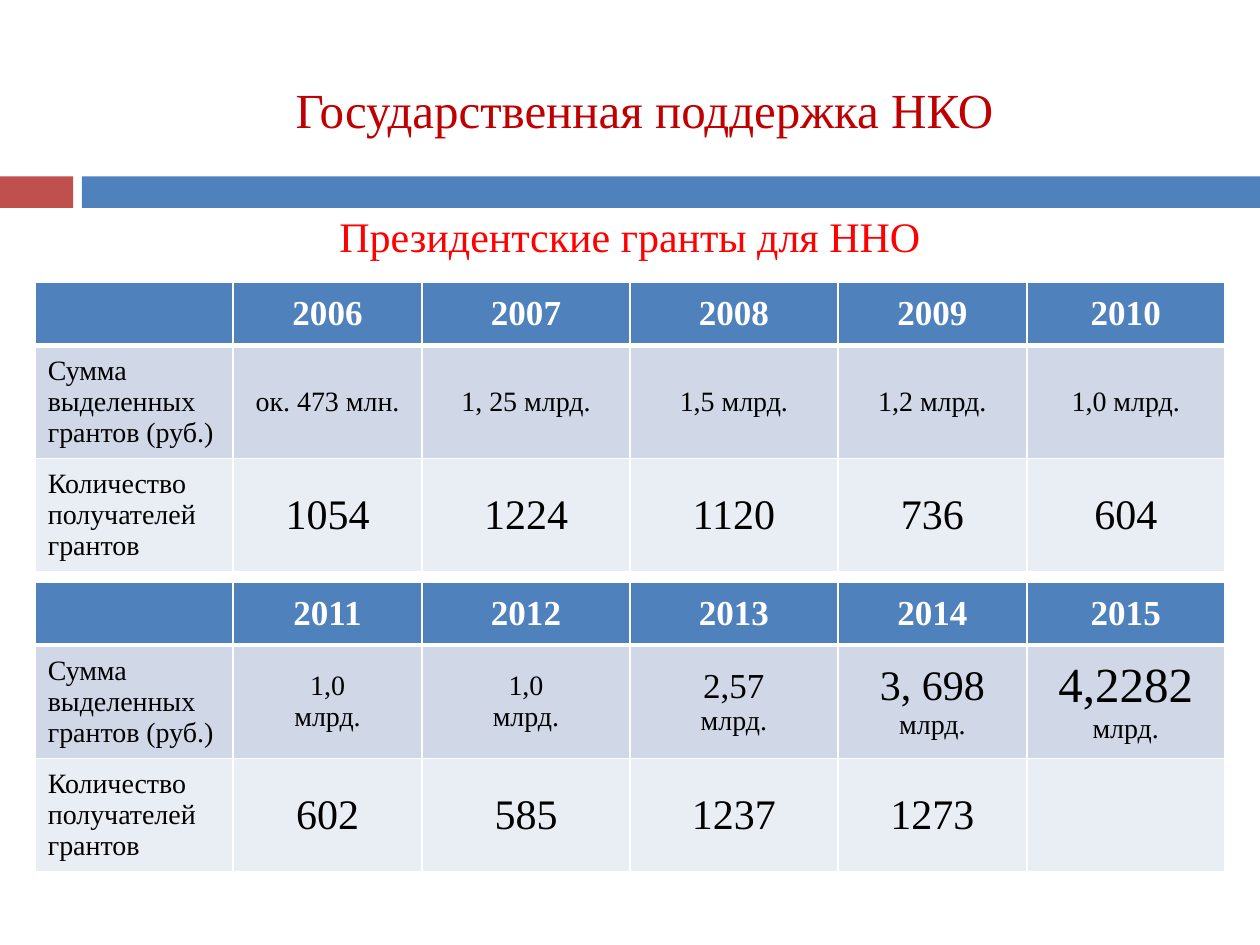
from dataclasses import dataclass

from lxml.etree import SubElement
from pptx import Presentation
from pptx.dml.color import RGBColor
from pptx.enum.shapes import MSO_SHAPE
from pptx.enum.text import MSO_ANCHOR, PP_ALIGN
from pptx.oxml.ns import qn
from pptx.util import Inches, Pt


@dataclass(frozen=True)
class Theme:
    font: str = "Times New Roman"
    title: str = "C00000"
    subtitle: str = "FF0000"
    accent: str = "C0504D"
    header: str = "4F81BD"
    amounts: str = "D0D8E8"
    recipients: str = "E9EDF4"
    light: str = "FFFFFF"
    dark: str = "000000"
    title_size: int = 28
    large_size: int = 24
    header_size: int = 20
    body_size: int = 16


@dataclass(frozen=True)
class Span:
    text: str
    size: int
    color: str = "000000"
    bold: bool = False


@dataclass(frozen=True)
class Bar:
    left: float
    width: float
    color: str


@dataclass(frozen=True)
class GrantTable:
    top: float
    years: range
    amounts: list
    recipients: list


THEME = Theme()
COLUMN_WIDTHS = [1.57, 1.5, 1.65, 1.65, 1.5, 1.57]
ROW_HEIGHTS = [0.5, 0.9, 0.9]


def write(frame, lines: list, alignment=PP_ALIGN.CENTER) -> None:
    for index, line in enumerate(lines):
        para = frame.paragraphs[0] if index == 0 else frame.add_paragraph()
        para.alignment = alignment
        for span in line:
            run = para.add_run()
            run.text = span.text
            formats = {"name": THEME.font, "size": Pt(span.size), "bold": span.bold}
            for name, value in formats.items():
                setattr(run.font, name, value)
            run.font.color.rgb = RGBColor.from_string(span.color)


def place(shape, left: float, top: float, width: float, height: float) -> None:
    position = {"left": left, "top": top, "width": width, "height": height}
    for name, value in position.items():
        setattr(shape, name, Inches(value))


def draw_bar(page, bar: Bar) -> None:
    shape = page.shapes.add_shape(
        MSO_SHAPE.RECTANGLE, Inches(bar.left), Inches(1.4), Inches(bar.width), Inches(0.25)
    )
    shape.shadow.inherit = False
    shape.fill.solid()
    shape.fill.fore_color.rgb = RGBColor.from_string(bar.color)
    shape.line.fill.background()


def draw_borders(cell, bottom: int) -> None:
    properties = cell._tc.get_or_add_tcPr()
    for side, points in {"lnL": 1, "lnR": 1, "lnT": 1, "lnB": bottom}.items():
        line = SubElement(properties, qn(f"a:{side}"), w=str(Pt(points)))
        fill = SubElement(line, qn("a:solidFill"))
        SubElement(fill, qn("a:srgbClr"), val=THEME.light)


def label(text: str) -> list:
    return [[Span(text, THEME.body_size)]]


def count(value: str) -> list:
    return [[Span(value, THEME.large_size)]] if value else []


def stacked(value: str, size: int) -> list:
    return [[Span(value, size)], [Span("млрд.", THEME.body_size)]]


def flowing(value: str, size: int) -> list:
    return [[Span(f"{value} ", size), Span("млрд.", THEME.body_size)]]


def draw_table(page, grants: GrantTable) -> None:
    headings = [
        [[Span(str(year), THEME.header_size, THEME.light, True)]] for year in grants.years
    ]
    rows = [
        (THEME.header, [[], *headings]),
        (THEME.amounts, [label("Сумма выделенных грантов (руб.)"), *grants.amounts]),
        (
            THEME.recipients,
            [label("Количество получателей грантов"), *map(count, grants.recipients)],
        ),
    ]
    table = page.shapes.add_table(
        len(rows), len(COLUMN_WIDTHS), Inches(0.28), Inches(grants.top),
        Inches(sum(COLUMN_WIDTHS)), Inches(sum(ROW_HEIGHTS)),
    ).table
    for column, width in zip(table.columns, COLUMN_WIDTHS):
        column.width = Inches(width)
    for row_index, (color, contents) in enumerate(rows):
        table.rows[row_index].height = Inches(ROW_HEIGHTS[row_index])
        for column_index, lines in enumerate(contents):
            cell = table.cell(row_index, column_index)
            cell.vertical_anchor = MSO_ANCHOR.MIDDLE
            draw_borders(cell, 3 if row_index == 0 else 1)
            cell.fill.solid()
            cell.fill.fore_color.rgb = RGBColor.from_string(color)
            alignment = PP_ALIGN.CENTER if column_index else PP_ALIGN.LEFT
            write(cell.text_frame, lines, alignment)


def main() -> None:
    deck = Presentation()
    deck.slide_width, deck.slide_height = Inches(10), Inches(7.5)
    page = deck.slides.add_slide(deck.slide_layouts[5])

    for bar in (Bar(0, 0.58, THEME.accent), Bar(0.65, 9.35, THEME.header)):
        draw_bar(page, bar)

    title = page.shapes.title
    place(title, 1.06, 0.58, 8.11, 0.57)
    write(title.text_frame, [[Span("Государственная поддержка НКО", THEME.title_size, THEME.title)]])

    box = page.shapes.add_textbox(Inches(0.67), Inches(1.62), Inches(8.66), Inches(1.18))
    box.text_frame.word_wrap = True
    write(
        box.text_frame,
        [[Span("Президентские гранты для ННО", THEME.large_size, THEME.subtitle)]],
    )

    early_amounts = ["ок. 473 млн.", "1, 25 млрд.", "1,5 млрд.", "1,2 млрд.", "1,0 млрд."]
    late_amounts = [
        stacked("1,0", THEME.body_size),
        stacked("1,0", THEME.body_size),
        stacked("2,57", THEME.header_size),
        flowing("3, 698", THEME.large_size),
        flowing("4,2282", THEME.title_size),
    ]
    tables = [
        GrantTable(2.24, range(2006, 2011), [label(amount) for amount in early_amounts],
                   ["1054", "1224", "1120", "736", "604"]),
        GrantTable(4.62, range(2011, 2016), late_amounts, ["602", "585", "1237", "1273", ""]),
    ]
    for grants in tables:
        draw_table(page, grants)

    deck.save("out.pptx")


if __name__ == "__main__":
    main()
